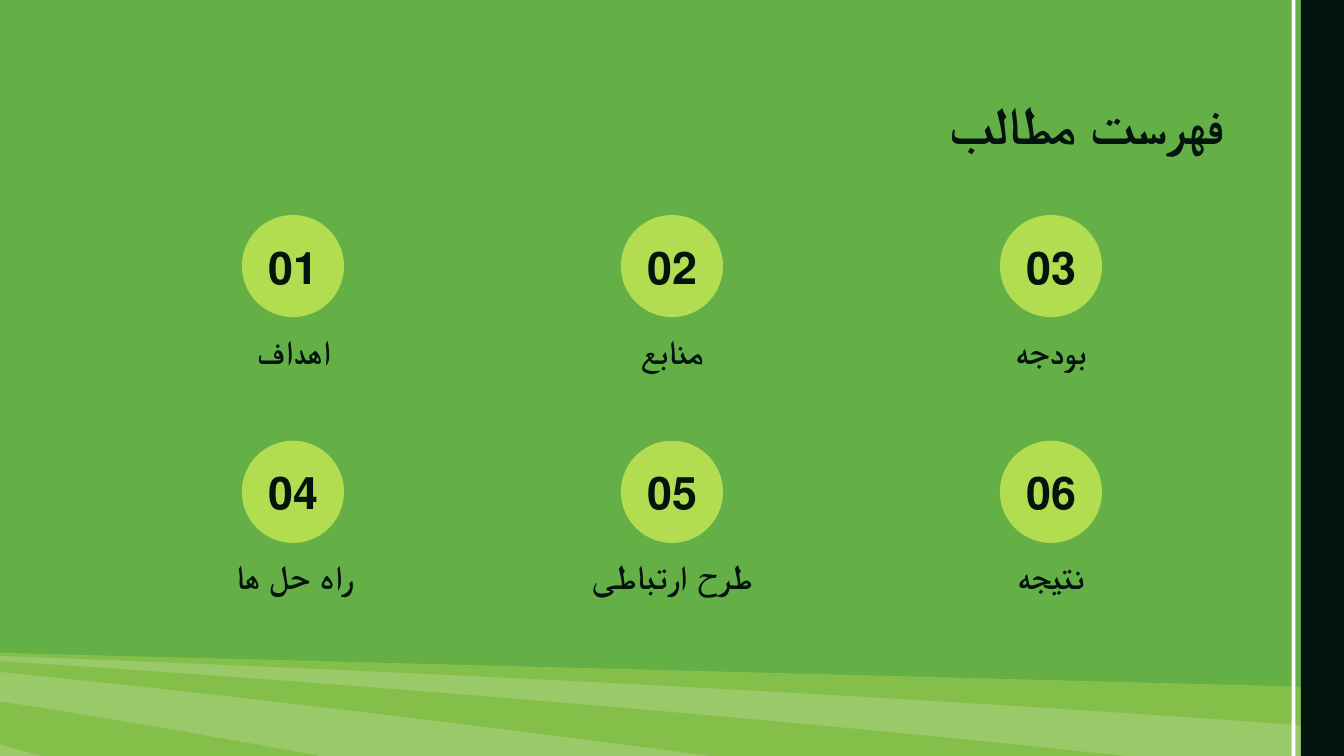
"""Build a Persian table of contents slide with six numbered topics."""
import pptx
import pptx.util
import pptx.dml.color
import pptx.enum.shapes
import pptx.enum.text

Inches = pptx.util.Inches
SHAPE = pptx.enum.shapes.MSO_SHAPE
ALIGN = pptx.enum.text.PP_ALIGN
ANCHOR = pptx.enum.text.MSO_ANCHOR

WIDTH = 10
HEIGHT = WIDTH * 9 / 16
GREEN, LIME, INK, WHITE = "64B047", "B3DD50", "02140D", "FFFFFF"
PALE, MID = "9AC96A", "83BF49"
FONT = "Lato"

TITLE = "فهرست مطالب"
TOPICS = ["اهداف", "منابع", "بودجه", "راه حل ها", "طرح ارتباطی", "نتیجه"]
COLUMNS = 3
FIRST_X, STEP_X = 2.18, 2.82
FIRST_Y, STEP_Y = 1.98, 1.68
CIRCLE = 0.76

# Each band lists its corners; a six-number entry is a Bezier curve.
BANDS = [
    (PALE, [(0, 4.86), (0, 5.79), (10, 5.79), (10, 5.12)]),
    (MID, [(10, 5.42), (10, 5.12), (0, 4.86), (0, 4.88),
           (1.25, 4.93, 5.55, 5.09, 10, 5.42)]),
    (MID, [(0, 5), (2.11, 5.21, 4.47, 5.51, 6.51, 5.79), (9.81, 5.79),
           (6.01, 5.33, 1.48, 5.01, 0, 4.92)]),
    (MID, [(0, 5.54), (0.29, 5.62, 0.59, 5.7, 0.88, 5.79), (3.24, 5.79),
           (2.07, 5.56, 0.74, 5.33, 0, 5.22)]),
]
SIDE_BARS = [(9.68, 0.32, INK), (9.61, 0.03, WHITE)]


def rgb(color):
    return pptx.dml.color.RGBColor.from_string(color)


def paint(sp, color):
    sp.shadow.inherit = False
    sp.fill.solid()
    sp.fill.fore_color.rgb = rgb(color)
    sp.line.fill.background()


def add_shape(s, kind, x, y, w, h, color):
    paint(s.shapes.add_shape(kind, Inches(x), Inches(y), Inches(w), Inches(h)), color)


def flatten(nodes, steps=16):
    points = []
    for node in nodes:
        if len(node) == 2:
            points.append(node)
            continue
        ends = [points[-1], node[:2], node[2:4], node[4:]]
        for i in range(1, steps + 1):
            t = i / steps
            weights = [(1 - t) ** 3, 3 * t * (1 - t) ** 2, 3 * t * t * (1 - t), t ** 3]
            points.append(tuple(sum(k * e[axis] for k, e in zip(weights, ends))
                                for axis in (0, 1)))
    return points


def add_band(s, color, nodes):
    points = [(Inches(x), Inches(y)) for x, y in flatten(nodes)]
    builder = s.shapes.build_freeform(*points[0])
    builder.add_line_segments(points[1:], close=True)
    paint(builder.convert_to_shape(), color)


def add_text(s, text, x, y, w, h, size, align=ALIGN.CENTER, anchor=ANCHOR.TOP):
    tf = s.shapes.add_textbox(Inches(x), Inches(y), Inches(w), Inches(h)).text_frame
    tf.word_wrap = True
    tf.vertical_anchor = anchor
    tf.margin_left = tf.margin_right = tf.margin_top = tf.margin_bottom = Inches(0.1)
    p = tf.paragraphs[0]
    p.text = text
    p.alignment = align
    p.font.size = pptx.util.Pt(size)
    p.font.bold = True
    p.font.name = FONT
    p.font.color.rgb = rgb(INK)
    p._p.get_or_add_pPr().set("rtl", "1")


prs = pptx.Presentation()
prs.slide_width, prs.slide_height = Inches(WIDTH), Inches(HEIGHT)
s = prs.slides.add_slide(prs.slide_layouts[6])
s.background.fill.solid()
s.background.fill.fore_color.rgb = rgb(GREEN)

for color, nodes in BANDS:
    add_band(s, color, nodes)
for x, w, color in SIDE_BARS:
    add_shape(s, SHAPE.RECTANGLE, x, 0, w, HEIGHT, color)

add_text(s, TITLE, 0.79, 0.59, 8.42, 0.63, 28, ALIGN.RIGHT)
for i, topic in enumerate(TOPICS):
    row, column = divmod(i, COLUMNS)
    cx, cy = FIRST_X + column * STEP_X, FIRST_Y + row * STEP_Y
    add_shape(s, SHAPE.OVAL, cx - CIRCLE / 2, cy - CIRCLE / 2, CIRCLE, CIRCLE, LIME)
    add_text(s, f"{i + 1:02d}", cx - 0.34, cy - 0.29, 0.68, 0.58, 24, anchor=ANCHOR.MIDDLE)
    add_text(s, topic, cx - 1.39, cy + 0.38, 2.78, 0.4, 18)

prs.save("out.pptx")
